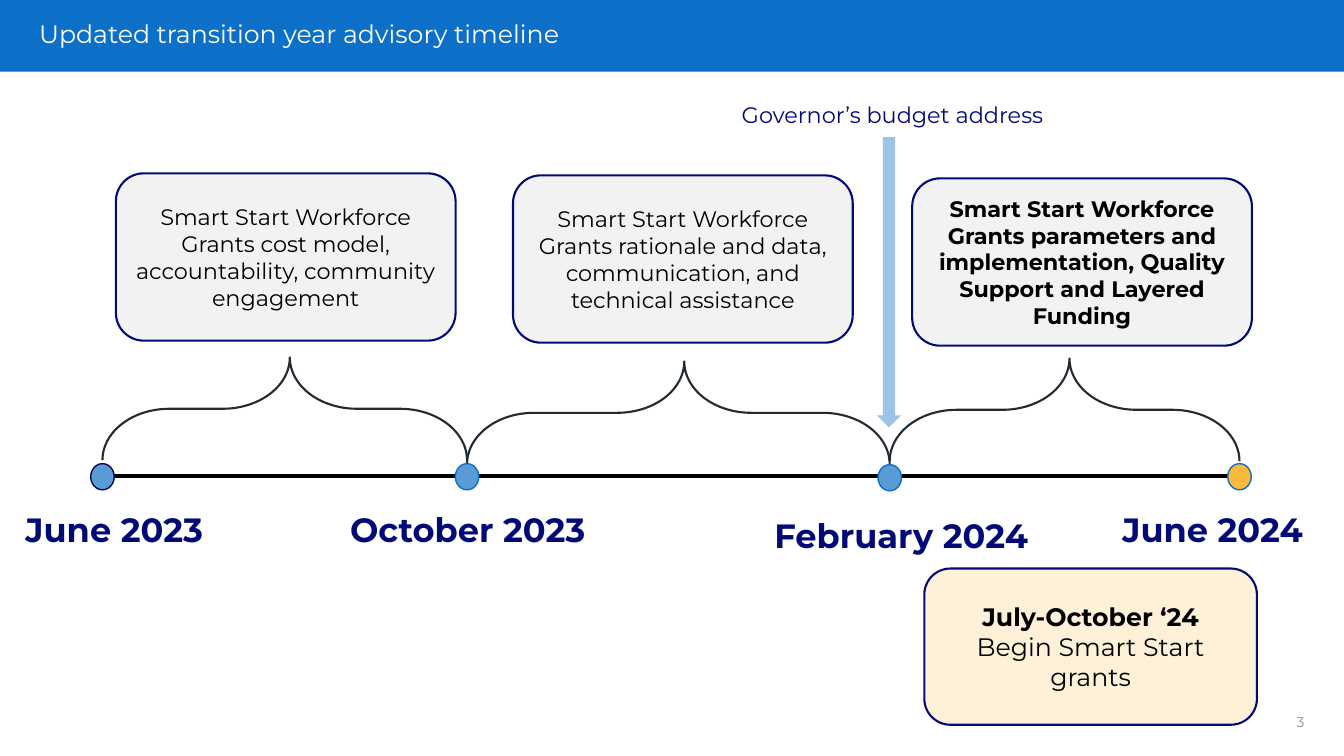
from dataclasses import dataclass

from pptx import Presentation
from pptx.dml.color import RGBColor
from pptx.enum.shapes import MSO_CONNECTOR, MSO_SHAPE
from pptx.enum.text import MSO_AUTO_SIZE, MSO_ANCHOR, PP_ALIGN
from pptx.oxml.ns import qn
from pptx.util import Inches, Pt

RECT, ROUND = MSO_SHAPE.RECTANGLE, MSO_SHAPE.ROUNDED_RECTANGLE
PROCESS = MSO_SHAPE.FLOWCHART_ALTERNATE_PROCESS
OVAL, BRACE, ARROW = MSO_SHAPE.OVAL, MSO_SHAPE.RIGHT_BRACE, MSO_SHAPE.DOWN_ARROW
STRAIGHT = MSO_CONNECTOR.STRAIGHT
TOP, MIDDLE = MSO_ANCHOR.TOP, MSO_ANCHOR.MIDDLE
LEFT, CENTER, RIGHT = PP_ALIGN.LEFT, PP_ALIGN.CENTER, PP_ALIGN.RIGHT
FIT = MSO_AUTO_SIZE.SHAPE_TO_FIT_TEXT

WIDTH, HEIGHT = Inches(13.33), Inches(7.5)
COL, ROW = WIDTH / 40, HEIGHT / 30


@dataclass(frozen=True)
class Theme:
    """Colours, type sizes and line widths of the slide."""
    font: str = "Montserrat"
    bar: str = "0C70C8"
    navy: str = "020A78"
    first_dot: str = "010759"
    dot: str = "5B9BD5"
    last_dot: str = "FBB83A"
    arrow: str = "9DC3E6"
    card: str = "F2F2F2"
    callout: str = "FEF1D8"
    brace: str = "222A34"
    white: str = "FFFFFF"
    black: str = "000000"
    gray: str = "8C8C8C"
    title: int = 18
    body: int = 16
    date: int = 24
    number: int = 10
    thin: float = 1
    outline: float = 1.5
    axis: float = 3


T = Theme()

DATES = [
    ("June 2023", 3.05, 3.4, 7.47, 0, T.dot, T.first_dot),
    ("October 2023", 13.9, 13.92, 7.8, 0, T.dot, T.bar),
    ("February 2024", 26.48, 26.82, 8.46, 0.24, T.dot, T.bar),
    ("June 2024", 36.89, 36.09, 7.8, 0, T.last_dot, T.bar),
]
PHASES = [
    ("Smart Start Workforce Grants cost model, accountability, community engagement",
     3.45, 6.88, 16.22, False),
    ("Smart Start Workforce Grants rationale and data, communication, and technical assistance",
     15.27, 6.96, 16.38, False),
    ("Smart Start Workforce Grants parameters and implementation, Quality Support and Layered Funding",
     27.15, 7.08, 16.26, True),
]


def rgb(value):
    """Turn a hex string into a colour."""
    return RGBColor.from_string(value)


def grid(x, y, w, h):
    """Convert columns and rows to slide lengths."""
    return round(x * COL), round(y * ROW), round(w * COL), round(h * ROW)


def write(sp, lines, size, color, align=CENTER, anchor=MIDDLE, wrap=True, spacing=None):
    """Fill a shape with (text, bold) paragraphs."""
    tf = sp.text_frame
    tf.word_wrap, tf.vertical_anchor = wrap, anchor
    for i, (text, bold) in enumerate(lines):
        p = tf.add_paragraph() if i else tf.paragraphs[0]
        p.alignment, p.line_spacing = align, spacing
        r = p.add_run()
        r.text = text
        for name, value in {"name": T.font, "size": Pt(size), "bold": bold}.items():
            setattr(r.font, name, value)
        r.font.color.rgb = rgb(color)


def add_text(s, box, text, size, color, bold=False, **layout):
    """Add a one-paragraph text box."""
    sp = s.shapes.add_textbox(*grid(*box))
    write(sp, [(text, bold)], size, color, **layout)
    return sp


def add_block(s, kind, box, fill=None, line=None, width=T.outline):
    """Add a flat preset shape with an optional fill and outline."""
    sp = s.shapes.add_shape(kind, *grid(*box))
    sp.shadow.inherit = False
    if fill:
        sp.fill.solid()
        sp.fill.fore_color.rgb = rgb(fill)
    else:
        sp.fill.background()
    if line:
        sp.line.color.rgb, sp.line.width = rgb(line), Pt(width)
    else:
        sp.line.fill.background()
    return sp


def add_axis(s, start, end, y):
    """Draw the horizontal timeline."""
    c = s.shapes.add_connector(STRAIGHT, round(start * COL), round(y * ROW),
                               round(end * COL), round(y * ROW))
    c.line.color.rgb, c.line.width = rgb(T.black), Pt(T.axis)
    sp_pr = c._element.spPr
    sp_pr.append(sp_pr.makeelement(qn("a:effectLst"), {}))


def add_brace(s, start, end, mid):
    """Span two dates with an upward brace."""
    sp = add_block(s, BRACE, (0, 0, 1, 1), line=T.brace)
    sp.width, sp.height = round(4.08 * ROW), round((end - start) * COL)
    sp.left = round((start + end) / 2 * COL - sp.width / 2)
    sp.top = round(mid * ROW - sp.height / 2)
    sp.rotation = 270
    sp.adjustments[0], sp.adjustments[1] = 0.651, 0.514


def add_phase(s, phase, start, end):
    """Add a phase card and the brace beneath it."""
    text, x, y, mid, bold = phase
    add_brace(s, start, end, mid)
    sp = add_block(s, ROUND, (x, y, 10.11, 6.64), T.card, T.navy)
    write(sp, [(text, bold)], T.body, T.black)


def add_date(s, text, x, center, width, drop, fill, line):
    """Add a dot on the axis and its date label."""
    add_block(s, OVAL, (x - 0.35, 18.4 + drop / 6, 0.7, 1.04), fill, line, T.thin)
    add_text(s, (center - width / 2, 20 + drop, width, 3.52), text, T.date, T.navy,
             bold=True, anchor=TOP)


def main():
    """Build and save the timeline slide."""
    prs = Presentation()
    prs.slide_width, prs.slide_height = WIDTH, HEIGHT
    s = prs.slides.add_slide(prs.slide_layouts[6])

    add_block(s, RECT, (0, 0, 40, 2.84), T.bar)
    add_text(s, (30.12, 27.84, 9, 1.6), "3", T.number, T.gray, align=RIGHT)
    add_text(s, (0.87, 0.64, 25.26, 1.52), "Updated transition year advisory timeline",
             T.title, T.white, align=LEFT, spacing=0.9)

    add_axis(s, 2.7, 36.9, 18.88)
    for phase, start, end in zip(PHASES, DATES, DATES[1:]):
        add_phase(s, phase, start[1], end[1])
    add_block(s, ARROW, (26.1, 5.44, 0.72, 11.52), T.arrow)
    for date in DATES:
        add_date(s, *date)

    sp = add_block(s, PROCESS, (27.51, 22.56, 9.9, 6.2), T.callout, T.navy)
    write(sp, [("July-October ‘24", True), ("Begin Smart Start grants", False)],
          T.title, T.black)
    sp = add_text(s, (21.78, 3.8, 10.02, 1.48), "Governor’s budget address",
                  T.body, T.navy, align=LEFT, anchor=TOP, wrap=False)
    sp.text_frame.auto_size = FIT

    prs.save("out.pptx")


if __name__ == "__main__":
    main()
